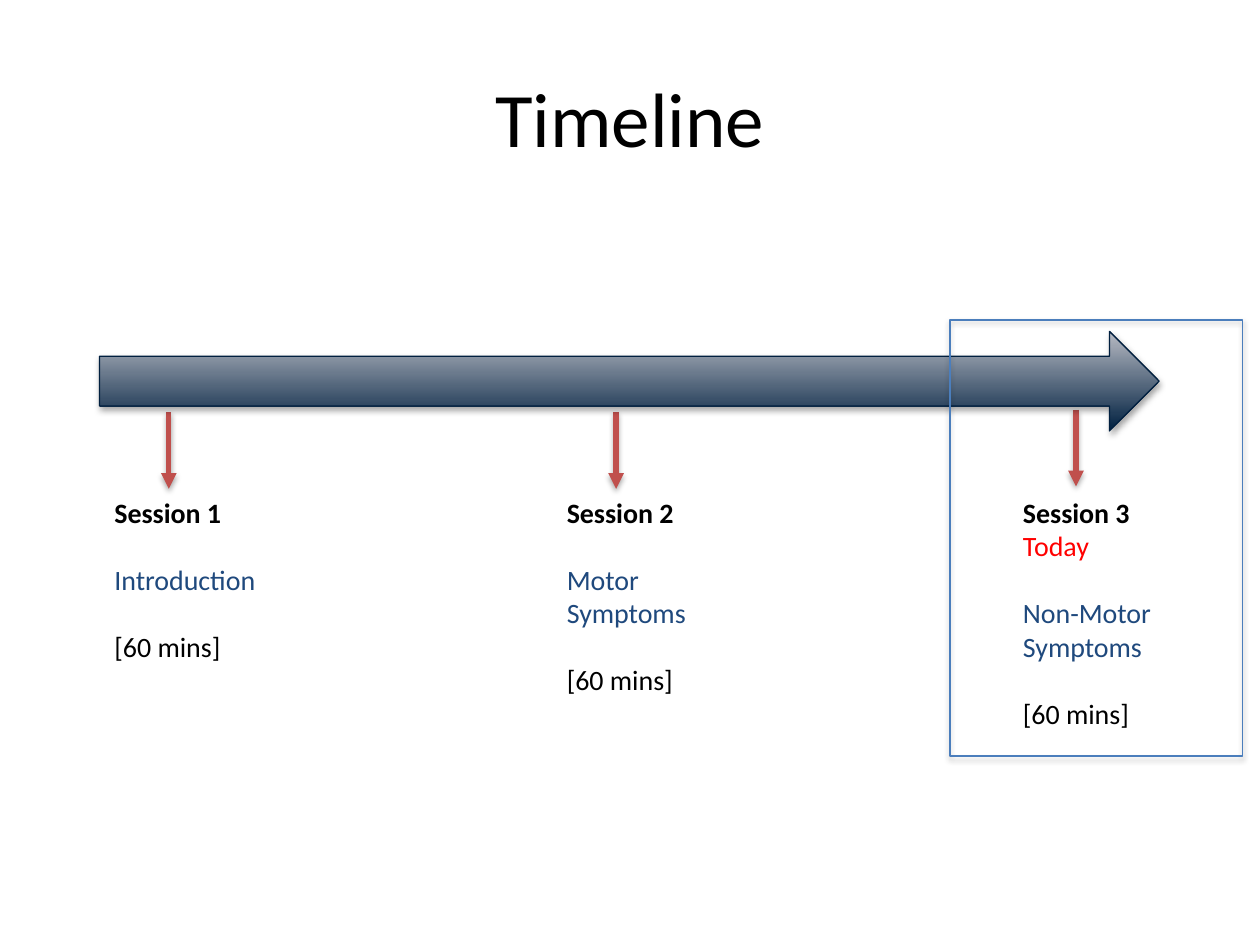
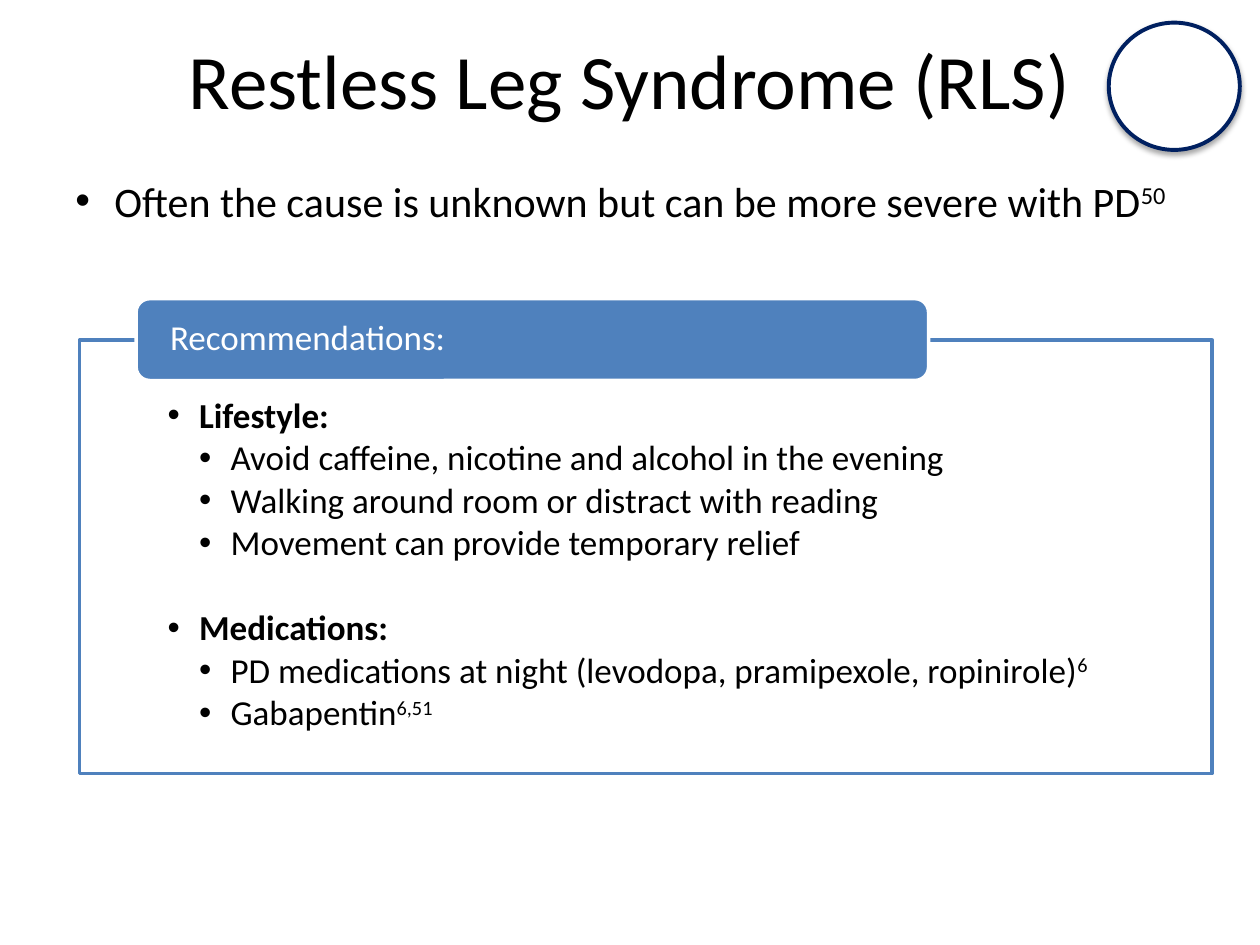
from typing import NamedTuple

from lxml.etree import SubElement
from pptx import Presentation
from pptx.dml.color import RGBColor
from pptx.enum.shapes import MSO_CONNECTOR, MSO_SHAPE
from pptx.enum.text import MSO_ANCHOR, PP_ALIGN
from pptx.oxml.ns import qn
from pptx.util import Inches, Pt

BLACK = RGBColor(0x00, 0x00, 0x00)
WHITE = RGBColor(0xFF, 0xFF, 0xFF)
RED = RGBColor(0xFF, 0x00, 0x00)
BRICK = RGBColor(0xC0, 0x50, 0x4D)
TOPIC = RGBColor(0x1F, 0x49, 0x7D)
BLUE = RGBColor(0x4F, 0x81, 0xBD)
FRAME = RGBColor(0x4B, 0x7E, 0xBC)
NAVY = RGBColor(0x00, 0x20, 0x60)
EDGE = RGBColor(0x00, 0x1F, 0x3F)
DARK = RGBColor(0x00, 0x20, 0x40)
PALE = RGBColor(0xB8, 0xBB, 0xC4)

FONT = "Calibri"
INSETS = (0.1, 0.05, 0.1, 0.05)
SHADE = {"blurRad": "40000", "dist": "23000", "dir": "5400000", "rotWithShape": "0"}


class Box(NamedTuple):
    left: float
    top: float
    width: float
    height: float


class Para(NamedTuple):
    text: str
    size: float
    color: RGBColor = BLACK
    bold: bool = False
    note: str = ""  # raised reference number
    before: float = 0
    indent: float = 0
    hang: float = 0
    spacing: float = 1.0
    align: PP_ALIGN = PP_ALIGN.LEFT


class Session(NamedTuple):
    box: Box
    arrow: float
    start: float
    topic: str
    tag: str = ""


SESSIONS = [
    Session(Box(0.81, 3.88, 1.64, 1.45), 1.34, 3.27, "Introduction"),
    Session(Box(4.4, 3.88, 1.68, 1.72), 4.89, 3.27, "Motor Symptoms"),
    Session(Box(8.02, 3.88, 1.48, 1.99), 8.54, 3.25, "Non-Motor Symptoms", "Today"),
]

ADVICE = {
    "Lifestyle:": [
        ("Avoid caffeine, nicotine and alcohol in the evening", ""),
        ("Walking around room or distract with reading", ""),
        ("Movement can provide temporary relief", ""),
    ],
    "Medications:": [
        ("PD medications at night (levodopa, pramipexole, ropinirole)", "6"),
        ("Gabapentin", "6,51"),
    ],
}


def add_shade(item) -> None:
    """Give a shape or connector a soft shadow below it."""
    props = item._element.spPr
    for old in props.findall(qn("a:effectLst")):
        props.remove(old)
    outer = SubElement(SubElement(props, qn("a:effectLst")), qn("a:outerShdw"), SHADE)
    tint = SubElement(outer, qn("a:srgbClr"), val="000000")
    SubElement(tint, qn("a:alpha"), val="35000")


def add_run(para, item: Para, text: str):
    run = para.add_run()
    run.text = text
    style = {"name": FONT, "size": Pt(item.size), "bold": item.bold}
    for name, value in style.items():
        setattr(run.font, name, value)
    run.font.color.rgb = item.color
    return run


def add_text(slide, box: Box, items: list[Para], anchor=MSO_ANCHOR.TOP, insets=INSETS) -> None:
    frame = slide.shapes.add_textbox(*map(Inches, box)).text_frame
    frame.word_wrap = True
    frame.vertical_anchor = anchor
    for side, inset in zip(("left", "top", "right", "bottom"), insets):
        setattr(frame, f"margin_{side}", Inches(inset))
    for index, item in enumerate(items):
        para = frame.add_paragraph() if index else frame.paragraphs[0]
        style = {
            "alignment": item.align,
            "line_spacing": item.spacing,
            "space_before": Pt(item.before),
        }
        for name, value in style.items():
            setattr(para, name, value)
        if item.hang:
            props = para._p.get_or_add_pPr()
            props.set("marL", str(Inches(item.indent)))
            props.set("indent", str(-Inches(item.hang)))
            SubElement(props, qn("a:buFont"), typeface="Arial")
            SubElement(props, qn("a:buChar"), char="•")
        add_run(para, item, item.text)
        if item.note:
            run = add_run(para, item, item.note)
            run.font._element.set("baseline", "30000")


def add_title(slide, text: str, top: float) -> None:
    title = Para(text, 44, align=PP_ALIGN.CENTER)
    add_text(slide, Box(0.5, top, 9, 1.25), [title], MSO_ANCHOR.MIDDLE)


def add_form(slide, kind: MSO_SHAPE, box: Box, line: RGBColor, width: float, fill=None):
    form = slide.shapes.add_shape(kind, *map(Inches, box))
    form.shadow.inherit = False
    if fill is None:
        form.fill.background()
    else:
        form.fill.solid()
        form.fill.fore_color.rgb = fill
    form.line.color.rgb = line
    form.line.width = Pt(width)
    return form


def add_arrow(slide, left: float, top: float) -> None:
    ends = map(Inches, (left, top, left, top + 0.61))
    arrow = slide.shapes.add_connector(MSO_CONNECTOR.STRAIGHT, *ends)
    arrow.line.color.rgb = BRICK
    arrow.line.width = Pt(3)
    SubElement(arrow.line._get_or_add_ln(), qn("a:tailEnd"), type="triangle")
    add_shade(arrow)


def draw_time(slide) -> None:
    add_title(slide, "Timeline", 0.3)
    for number, item in enumerate(SESSIONS, 1):
        add_arrow(slide, item.arrow, item.start)
        lines = [Para(f"Session {number}", 16, bold=True)]
        if item.tag:
            lines.append(Para(item.tag, 16, RED))
        lines.append(Para(item.topic, 16, TOPIC, before=19.2))
        lines.append(Para("[60 mins]", 16, before=19.2))
        add_text(slide, item.box, lines)

    band = add_form(slide, MSO_SHAPE.RIGHT_ARROW, Box(0.79, 2.63, 8.41, 0.79), EDGE, 0.75)
    band.fill.gradient()
    band.fill.gradient_angle = 90
    for stop, color, place in zip(band.fill.gradient_stops, (DARK, PALE), (0, 1)):
        stop.color.rgb = color
        stop.position = place
    add_shade(band)
    add_shade(add_form(slide, MSO_SHAPE.RECTANGLE, Box(7.54, 2.54, 2.32, 3.46), FRAME, 0.75))


def draw_legs(slide) -> None:
    add_shade(add_form(slide, MSO_SHAPE.OVAL, Box(8.8, 0.18, 1.04, 1.01), NAVY, 2.25, WHITE))
    add_title(slide, "Restless Leg Syndrome (RLS)", 0)

    panel = Box(0.63, 2.7, 8.99, 3.44)
    add_form(slide, MSO_SHAPE.RECTANGLE, panel, BLUE, 2, WHITE)
    lines = []
    for head, points in ADVICE.items():
        gap = 27.2 if lines else 0
        lines.append(Para(head, 20, bold=True, before=gap, indent=0.25, hang=0.25, spacing=0.9))
        for text, note in points:
            lines.append(Para(text, 20, note=note, before=2.6, indent=0.5, hang=0.25, spacing=0.9))
    add_text(slide, panel, lines, insets=(0.7, 0.46, 0.7, 0.16))

    add_form(slide, MSO_SHAPE.ROUNDED_RECTANGLE, Box(1.08, 2.37, 6.29, 0.65), WHITE, 2, BLUE)
    label = Para("Recommendations:", 20, WHITE, spacing=0.9)
    add_text(slide, Box(1.11, 2.4, 6.23, 0.58), [label], MSO_ANCHOR.MIDDLE, (0.24, 0, 0.24, 0))

    cause = "Often the cause is unknown but can be more severe with PD"
    add_text(slide, Box(0.5, 1.34, 9.69, 0.5), [Para(cause, 24, note="50", indent=0.31, hang=0.31)])


def main() -> None:
    deck = Presentation()
    deck.slide_width = Inches(10)
    deck.slide_height = Inches(7.5)
    for draw in (draw_time, draw_legs):
        draw(deck.slides.add_slide(deck.slide_layouts[6]))
    deck.save("out.pptx")


if __name__ == "__main__":
    main()
